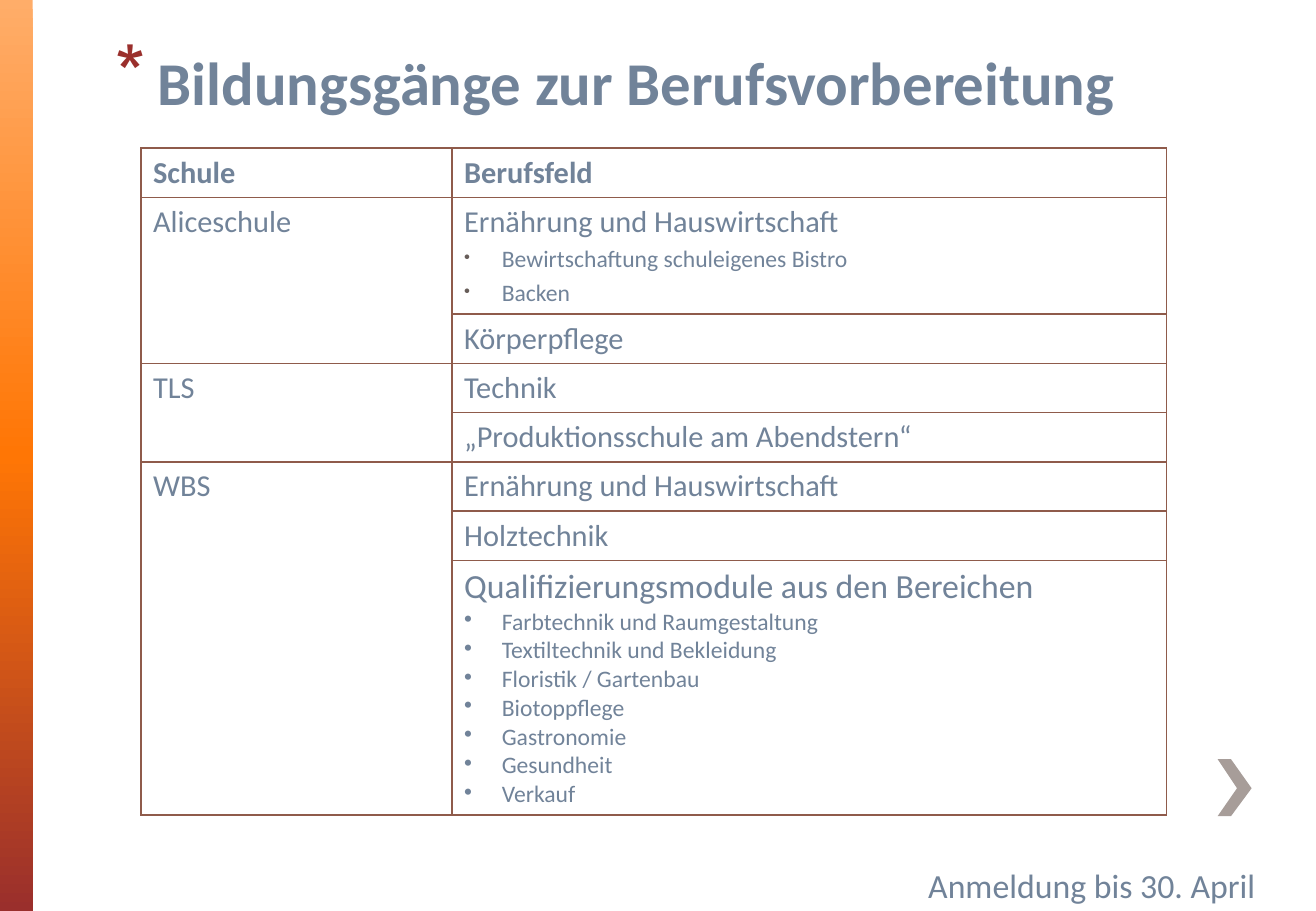
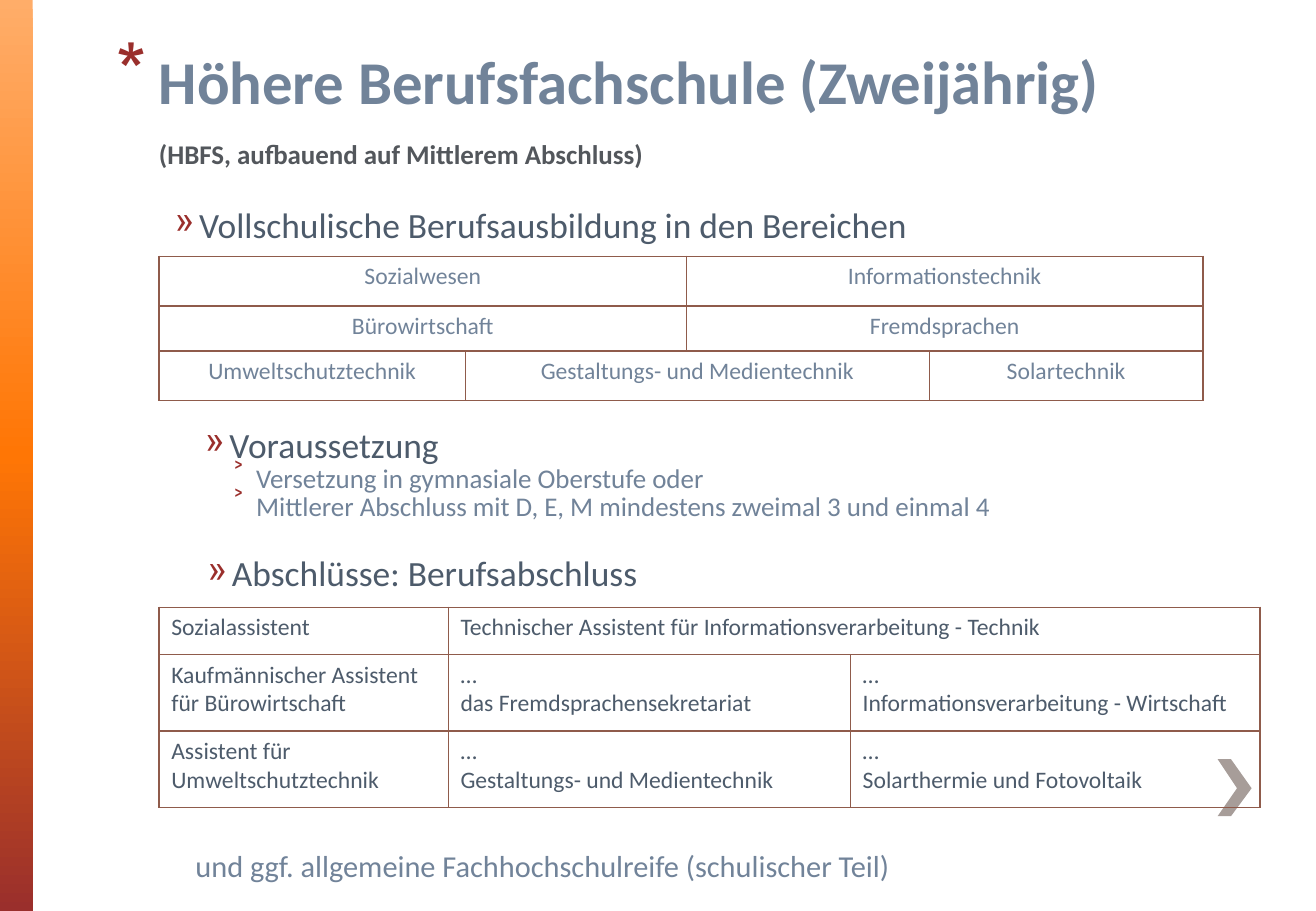
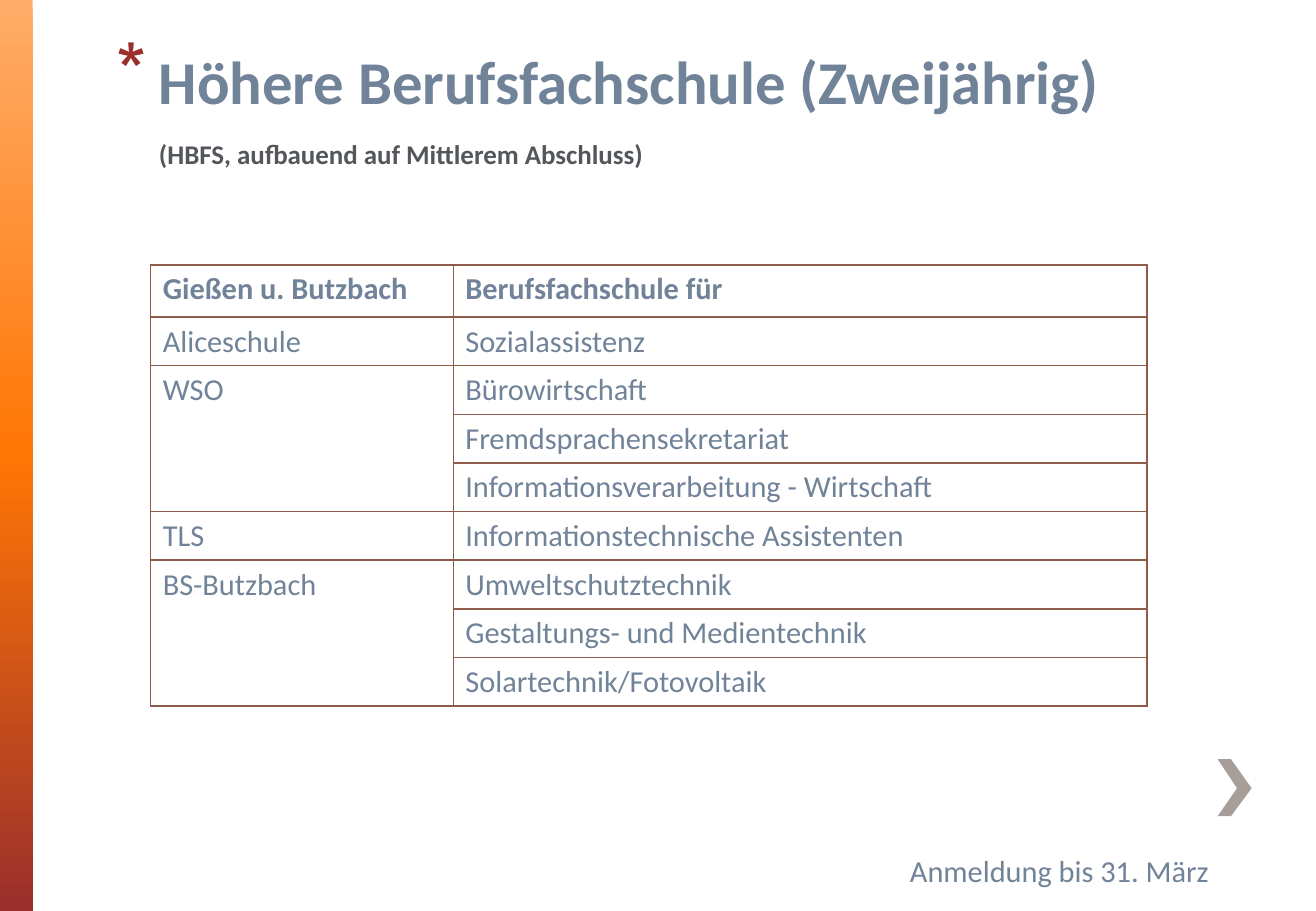
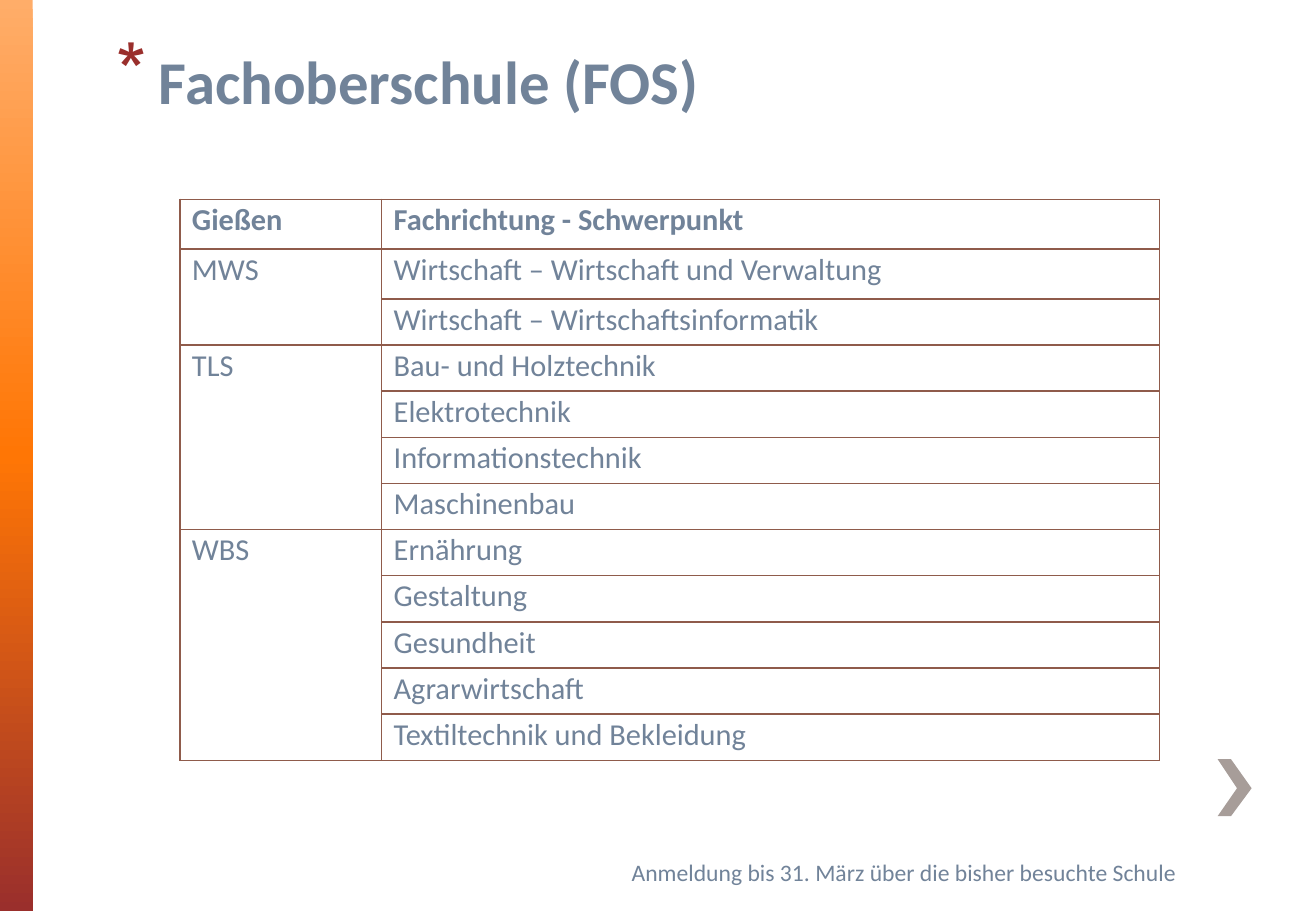
from copy import deepcopy

from lxml import etree
from pptx import Presentation
from pptx.dml.color import RGBColor
from pptx.enum.shapes import MSO_SHAPE
from pptx.enum.text import PP_ALIGN
from pptx.oxml.ns import qn
from pptx.util import Pt

RECTANGLE = MSO_SHAPE.RECTANGLE
CENTER = PP_ALIGN.CENTER

PX = 9144  # 100 px to the inch
WIDTH, HEIGHT = 1083, 750
FONT = "Calibri"

COLORS = {
    "title": "718399",
    "subtitle": "53575C",
    "text": "718399",
    "dark": "4D5B6B",
    "accent": "9A2F2C",
    "bullet": "675D59",
    "border": "8F5B4B",
    "arrow": "A79D99",
    "band_top": "FFAD69",
    "band_middle": "FF7605",
}

# bullet: (character, color or None for the text color, percent of text size)
# indent: (left margin, first line offset) in px
STYLES = {
    "title": dict(size=36, color="title", bold=True, indent=(35, -35), line_spacing=0.9,
                  bullet=("*", "accent", 128)),
    "subtitle": dict(size=16, color="subtitle", bold=True, indent=(35, 0), line_spacing=0.9,
                     space_before=14),
    "heading": dict(size=21, color="dark", indent=(38, -20), bullet=("»", "accent", 100)),
    "point": dict(size=16, color="text", indent=(60, -20), line_spacing=0.7,
                  space_before=3.2, bullet=("˃", "accent", 100)),
    "remark": dict(size=18, color="text", indent=(38, 0), line_spacing=0.9),
    "large": dict(size=20, color="text"),
    "normal": dict(size=18, color="text"),
    "small": dict(size=14, color="text"),
    "header": dict(size=18, color="text", bold=True),
    "centered": dict(size=14, color="text", align=CENTER),
    "degree": dict(size=14, color="dark"),
    "activity": dict(size=14, color="text", indent=(31, -31), space_before=2.8,
                     bullet=("•", "bullet", 75)),
    "module": dict(size=14, color="text", indent=(31, -31), bullet=("•", None, 100)),
}

HBFS_TITLE = [
    ("title", "Höhere Berufsfachschule (Zweijährig)"),
    ("subtitle", "(HBFS, aufbauend auf Mittlerem Abschluss)"),
]
TITLE_AT = (86, 38, 934, 83)

# In a table, None continues the cell to the left, or in the first column the cell above.
SLIDES = [
    {
        "boxes": [
            ((85, 39, 898, 139), [("title", "Bildungsgänge zur Berufsvorbereitung")]),
            ((754, 707, 322, 43), [("large", "Anmeldung bis 30. April")]),
        ],
        "tables": [{
            "at": (116, 122),
            "columns": [256, 588],
            "heights": [40, 96] + [40] * 5 + [207],
            "styles": ("header", "normal"),
            "rows": [
                ["Schule", "Berufsfeld"],
                ["Aliceschule", [
                    ("normal", "Ernährung und Hauswirtschaft"),
                    ("activity", "Bewirtschaftung schuleigenes Bistro"),
                    ("activity", "Backen"),
                ]],
                [None, "Körperpflege"],
                ["TLS", "Technik"],
                [None, "„Produktionsschule am Abendstern“"],
                ["WBS", "Ernährung und Hauswirtschaft"],
                [None, "Holztechnik"],
                [None, [
                    ("large", "Qualifizierungsmodule aus den Bereichen"),
                    ("module", "Farbtechnik und Raumgestaltung"),
                    ("module", "Textiltechnik und Bekleidung"),
                    ("module", "Floristik / Gartenbau"),
                    ("module", "Biotoppflege"),
                    ("module", "Gastronomie"),
                    ("module", "Gesundheit"),
                    ("module", "Verkauf"),
                ]],
            ],
        }],
    },
    {
        "boxes": [
            (TITLE_AT, HBFS_TITLE),
            ((116, 162, 851, 75),
             [("heading", "Vollschulische Berufsausbildung in den Bereichen")]),
            ((141, 343, 851, 95), [
                ("heading", "Voraussetzung"),
                ("point", "Versetzung in gymnasiale Oberstufe oder"),
                ("point", "Mittlerer Abschluss mit D, E, M mindestens zweimal 3 und einmal 4"),
            ]),
            ((143, 449, 851, 52), [("heading", "Abschlüsse: Berufsabschluss")]),
            ((113, 696, 851, 42),
             [("remark", "und ggf. allgemeine Fachhochschulreife (schulischer Teil)")]),
        ],
        "tables": [
            {
                "at": (131, 211),
                "columns": [252, 182, 200, 225],
                "heights": [41, 37, 41],
                "styles": ("centered", "centered"),
                "rows": [
                    ["Sozialwesen", None, "Informationstechnik", None],
                    ["Bürowirtschaft", None, "Fremdsprachen", None],
                    ["Umweltschutztechnik", "Gestaltungs- und Medientechnik", None, "Solartechnik"],
                ],
            },
            {
                "at": (131, 500),
                "columns": [238, 331, 337],
                "heights": [39, 63, 63],
                "styles": ("degree", "degree"),
                "rows": [
                    ["Sozialassistent",
                     "Technischer Assistent für Informationsverarbeitung - Technik", None],
                    ["Kaufmännischer Assistent für Bürowirtschaft",
                     "…\vdas Fremdsprachensekretariat",
                     "…\vInformationsverarbeitung - Wirtschaft"],
                    ["Assistent für Umweltschutztechnik",
                     "…\vGestaltungs- und Medientechnik",
                     "…\vSolarthermie und Fotovoltaik"],
                ],
            },
        ],
    },
    {
        "boxes": [
            (TITLE_AT, HBFS_TITLE),
            ((739, 697, 308, 40), [("normal", "Anmeldung bis 31. März")]),
        ],
        "tables": [{
            "at": (124, 218),
            "columns": [249, 571],
            "heights": [43] + [40] * 8,
            "styles": ("header", "normal"),
            "rows": [
                ["Gießen u. Butzbach", "Berufsfachschule für"],
                ["Aliceschule", "Sozialassistenz"],
                ["WSO", "Bürowirtschaft"],
                [None, "Fremdsprachensekretariat"],
                [None, "Informationsverarbeitung - Wirtschaft"],
                ["TLS", "Informationstechnische Assistenten"],
                ["BS-Butzbach", "Umweltschutztechnik"],
                [None, "Gestaltungs- und Medientechnik"],
                [None, "Solartechnik/Fotovoltaik"],
            ],
        }],
    },
    {
        "boxes": [
            (TITLE_AT, [("title", "Fachoberschule (FOS)")]),
            ((510, 701, 554, 33),
             [("small", "Anmeldung bis 31. März über die bisher besuchte Schule")]),
        ],
        "tables": [{
            "at": (148, 164),
            "columns": [166, 640],
            "heights": [41, 41] + [38] * 10,
            "margins": (2, 0),
            "styles": ("header", "normal"),
            "rows": [
                ["Gießen", "Fachrichtung - Schwerpunkt"],
                ["MWS", "Wirtschaft – Wirtschaft und Verwaltung"],
                [None, "Wirtschaft – Wirtschaftsinformatik"],
                ["TLS", "Bau- und Holztechnik"],
                [None, "Elektrotechnik"],
                [None, "Informationstechnik"],
                [None, "Maschinenbau"],
                ["WBS", "Ernährung"],
                [None, "Gestaltung"],
                [None, "Gesundheit"],
                [None, "Agrarwirtschaft"],
                [None, "Textiltechnik und Bekleidung"],
            ],
        }],
    },
]


def write_lines(text_frame, lines):
    """Fill a text frame with one paragraph per (style name, text) pair."""
    for index, (style_name, text) in enumerate(lines):
        style = STYLES[style_name]
        paragraph = text_frame.add_paragraph() if index else text_frame.paragraphs[0]
        paragraph.text = text
        paragraph.alignment = style.get("align")
        paragraph.line_spacing = style.get("line_spacing")
        paragraph.space_before = Pt(style.get("space_before", 0))

        properties = paragraph._p.get_or_add_pPr()
        margin, offset = style.get("indent", (0, 0))
        properties.set("marL", str(margin * PX))
        properties.set("indent", str(offset * PX))
        if "bullet" in style:
            character, color, percent = style["bullet"]
            if color:
                bullet_color = etree.SubElement(properties, qn("a:buClr"))
                etree.SubElement(bullet_color, qn("a:srgbClr"), val=COLORS[color])
            etree.SubElement(properties, qn("a:buSzPct"), val=str(percent * 1000))
            etree.SubElement(properties, qn("a:buChar"), char=character)
        else:
            etree.SubElement(properties, qn("a:buNone"))

        font = paragraph.font
        font.name = FONT
        font.size = Pt(style["size"])
        font.bold = style.get("bold", False)
        font.color.rgb = RGBColor.from_string(COLORS[style["color"]])


def add_bordered_table(slide, data):
    rows, columns, heights = data["rows"], data["columns"], data["heights"]
    left, top = data["at"]
    table = slide.shapes.add_table(
        len(rows), len(columns), left * PX, top * PX, sum(columns) * PX, sum(heights) * PX
    ).table
    table.first_row = table.horz_banding = False
    for column, width in zip(table.columns, columns):
        column.width = width * PX
    for row, height in zip(table.rows, heights):
        row.height = height * PX

    header_style, body_style = data["styles"]
    margin_top, margin_bottom = data.get("margins", (5, 5))
    for r, row in enumerate(rows):
        for c, content in enumerate(row):
            cell = table.cell(r, c)
            cell.margin_left = cell.margin_right = 10 * PX
            cell.margin_top, cell.margin_bottom = margin_top * PX, margin_bottom * PX
            for side in ("a:lnL", "a:lnR", "a:lnT", "a:lnB"):
                border = etree.SubElement(cell._tc.get_or_add_tcPr(), qn(side), w=str(Pt(1)))
                border_fill = etree.SubElement(border, qn("a:solidFill"))
                etree.SubElement(border_fill, qn("a:srgbClr"), val=COLORS["border"])
            cell.fill.background()
            if content is None:
                continue

            last_row, last_column = r, c
            while c == 0 and last_row + 1 < len(rows) and rows[last_row + 1][0] is None:
                last_row += 1
            while last_column + 1 < len(row) and row[last_column + 1] is None:
                last_column += 1
            if (last_row, last_column) != (r, c):
                cell.merge(table.cell(last_row, last_column))
            if isinstance(content, str):
                content = [(body_style if r else header_style, content)]
            write_lines(cell.text_frame, content)


presentation = Presentation()
presentation.slide_width = WIDTH * PX
presentation.slide_height = HEIGHT * PX
blank_layout = presentation.slide_layouts[6]

for slide_data in SLIDES:
    slide = presentation.slides.add_slide(blank_layout)

    band = slide.shapes.add_shape(RECTANGLE, 0, 0, 27 * PX, HEIGHT * PX)
    band.shadow.inherit = False
    band.line.fill.background()
    band.fill.gradient()
    band.fill.gradient_angle = 270
    stop_list = band._element.spPr.find(".//" + qn("a:gsLst"))
    stop_list.insert(1, deepcopy(stop_list[0]))
    band_colors = ("band_top", "band_middle", "accent")
    for index, (stop, color) in enumerate(zip(band.fill.gradient_stops, band_colors)):
        stop.position = index / 2
        stop.color.rgb = RGBColor.from_string(COLORS[color])

    outline = slide.shapes.build_freeform(1013, 625, scale=PX)
    outline.add_line_segments([(1002, 625), (1018, 649), (1002, 672), (1013, 672), (1030, 649)])
    arrow = outline.convert_to_shape()
    arrow.shadow.inherit = False
    arrow.line.fill.background()
    arrow.fill.solid()
    arrow.fill.fore_color.rgb = RGBColor.from_string(COLORS["arrow"])

    for table_data in slide_data["tables"]:
        add_bordered_table(slide, table_data)
    for position, lines in slide_data["boxes"]:
        box = slide.shapes.add_textbox(*(length * PX for length in position))
        box.text_frame.word_wrap = True
        write_lines(box.text_frame, lines)

presentation.save("out.pptx")
